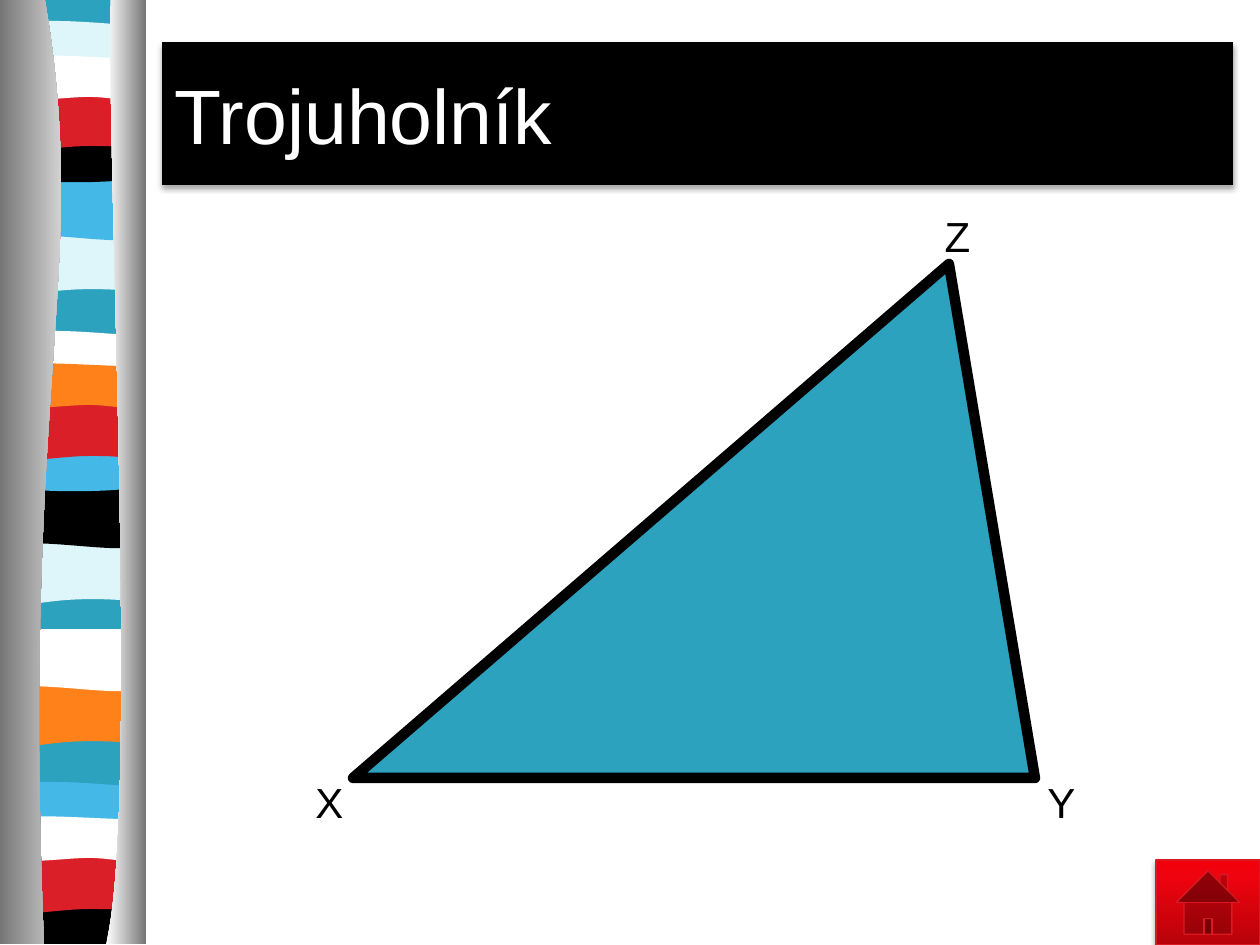
import copy

from lxml import etree
from pptx import Presentation
from pptx import util as u
from pptx.dml.color import RGBColor
from pptx.enum import shapes, text
from pptx.oxml.ns import qn

SCALE = 914400 / 126  # EMU in one px
FONT = "Arial"
BAND_LEFT = 6

COLOURS = {
    "teal": "2DA2BF", "pale": "DEF5FA", "blue": "44B9E8", "red": "DA1F28",
    "orange": "FF8119", "black": "000000", "white": "FFFFFF",
    "grey": "767676", "dark red": "B8020B", "bright red": "EE030E",
    "top red": "F2000C", "red edge": "DA1A23",
}

# Outlines: a 2-number entry is a corner, a 6-number entry a Bezier curve.
WAVES = {
    "swell": [(137, 0), (137, 59), (42, 49, 23, 69, 0, 59), (0, 0)],
    "ripple": [(137, 0), (137, 59), (114, 69, 42, 52, 0, 59), (0, 0)],
    "ribbon": [(137, 6), (137, 36), (114, 42, 23, 42, 0, 36), (0, 6),
               (9, 0, 29, 1, 52, 1), (75, 1, 118, 5, 137, 6)],
    "bowl": [(137, 0), (137, 41), (114, 48, 23, 48, 0, 41), (0, 0),
             (83, 6, 107, 0, 137, 0)],
    "arch": [(137, 0), (137, 59), (115, 53, 107, 53, 83, 53),
             (60, 53, 20, 59, 0, 59), (0, 0)],
    "crest": [(137, 6), (137, 45), (128, 52, 106, 45, 83, 45),
              (60, 45, 14, 52, 0, 45), (0, 6), (19, 0, 92, 6, 115, 6),
              (138, 6, 132, 6, 137, 6)],
    "base": [(137, 0), (137, 47), (0, 47), (0, 0), (83, 6, 107, 0, 137, 0)],
}

# Wave, top, colour; from back to front
BANDS = [
    ("swell", 233, "pale"), ("ripple", 178, "blue"), ("ribbon", 20, "pale"),
    ("bowl", 136, "black"), ("arch", 93, "red"), ("crest", 52, "white"),
    ("swell", 543, "pale"), ("ripple", 486, "black"), ("ribbon", 330, "white"),
    ("bowl", 445, "blue"), ("arch", 403, "red"), ("crest", 360, "orange"),
    ("swell", 685, "orange"), ("ripple", 629, "white"), ("ribbon", 781, "blue"),
    ("base", 897, "black"), ("arch", 856, "red"), ("crest", 813, "white"),
]

BACKDROP = [(143, 0), (143, 942), (6, 942), (6, 0)]
LEFT_EDGE = [(45, 0), (91, 272, 21, 373, 44, 944), (0, 944), (0, 0)]
RIGHT_EDGE = [(111, 0), (106, 158, 140, 814, 106, 944), (146, 944), (146, 0)]
TRIANGLE = [(353, 778), (1035, 778), (949, 264)]
LABELS = [("X", 303, 770, 49), ("Y", 1027, 770, 69), ("Z", 918, 204, 79)]


def px(length):
    return u.Emu(round(length * SCALE))


def colour(name):
    return RGBColor.from_string(COLOURS[name])


def paint(shape, name):
    shape.fill.solid()
    shape.fill.fore_color.rgb = colour(name)


def paint_gradient(shape, stops, angle):
    """Fill with (position, colour name) stops; the angle runs anticlockwise."""
    fill = shape.fill
    fill.gradient()
    fill.gradient_angle = angle
    stop_list = shape._element.spPr.find(".//" + qn("a:gsLst"))
    while len(stop_list) < len(stops):
        stop_list.append(copy.deepcopy(stop_list[-1]))
    for stop, (position, name) in zip(fill.gradient_stops, stops):
        stop.position = position
        stop.color.rgb = colour(name)


def add_soft_shadow(shape):
    shape.shadow.inherit = False
    effects = shape._element.spPr.find(qn("a:effectLst"))
    shadow = etree.SubElement(
        effects, qn("a:outerShdw"), blurRad=str(u.Pt(3.1)), dist=str(u.Pt(1.8)),
        dir="5400000", rotWithShape="0")
    tint = etree.SubElement(shadow, qn("a:srgbClr"), val=COLOURS["black"])
    etree.SubElement(tint, qn("a:alpha"), val="35000")


def bend_segments(shape, outline):
    """Merge the three line segments of each curve entry into one Bezier."""
    segments = iter(shape._element.findall(".//" + qn("a:lnTo")))
    for entry in outline[1:]:
        first = next(segments)
        if len(entry) == 2:
            continue
        curve = etree.Element(qn("a:cubicBezTo"))
        first.addprevious(curve)
        for segment in (first, next(segments), next(segments)):
            curve.append(segment[0])
            segment.getparent().remove(segment)


def add_outline(slide, outline, left=0, top=0):
    points = [(entry[i] + left, entry[i + 1] + top)
              for entry in outline for i in range(0, len(entry), 2)]
    builder = slide.shapes.build_freeform(*points[0], scale=SCALE)
    builder.add_line_segments(points[1:], close=True)
    shape = builder.convert_to_shape()
    bend_segments(shape, outline)
    shape.shadow.inherit = False
    shape.line.fill.background()
    return shape


def add_side_pattern(slide):
    paint(add_outline(slide, BACKDROP), "teal")
    for wave, top, name in BANDS:
        paint(add_outline(slide, WAVES[wave], BAND_LEFT, top), name)
    paint_gradient(add_outline(slide, LEFT_EDGE),
                   [(0, "grey"), (1, "white")], 0)
    paint_gradient(add_outline(slide, RIGHT_EDGE),
                   [(0, "white"), (1, "grey")], 0)


def write(shape, words, size, name, alignment):
    frame = shape.text_frame
    frame.text = words
    paragraph = frame.paragraphs[0]
    paragraph.alignment = alignment
    font = paragraph.runs[0].font
    font.name, font.size = FONT, u.Pt(size)
    font.color.rgb = colour(name)


def set_title(slide, words):
    title = slide.shapes.title
    title.left, title.top, title.width, title.height = map(
        px, (162, 42, 1071, 143))
    paint(title, "black")
    add_soft_shadow(title)
    write(title, words, 44, "white", text.PP_ALIGN.LEFT)
    title.text_frame.vertical_anchor = text.MSO_ANCHOR.MIDDLE


def add_triangle(slide):
    triangle = add_outline(slide, TRIANGLE)
    paint(triangle, "teal")
    triangle.line.color.rgb = colour("black")
    triangle.line.width = u.Pt(6)


def add_label(slide, letter, left, top, width):
    label = slide.shapes.add_textbox(px(left), px(top), px(width), px(63))
    label.text_frame.word_wrap = True
    label.text_frame.auto_size = text.MSO_AUTO_SIZE.SHAPE_TO_FIT_TEXT
    write(label, letter, 24, "black", text.PP_ALIGN.CENTER)


def add_home_button(slide):
    button = slide.shapes.add_shape(
        shapes.MSO_SHAPE.ACTION_BUTTON_HOME,
        px(1156), px(860), px(104), px(85))
    paint_gradient(button, [(0, "dark red"), (0.8, "bright red"),
                            (1, "top red")], 90)
    button.line.color.rgb = colour("red edge")
    button.line.width = u.Pt(0.75)
    add_soft_shadow(button)


def main():
    presentation = Presentation()
    presentation.slide_width, presentation.slide_height = px(1260), px(945)
    slide = presentation.slides.add_slide(presentation.slide_layouts[5])
    add_side_pattern(slide)
    set_title(slide, "Trojuholník")
    for label in LABELS:
        add_label(slide, *label)
    add_triangle(slide)
    add_home_button(slide)
    presentation.save("out.pptx")


if __name__ == "__main__":
    main()
